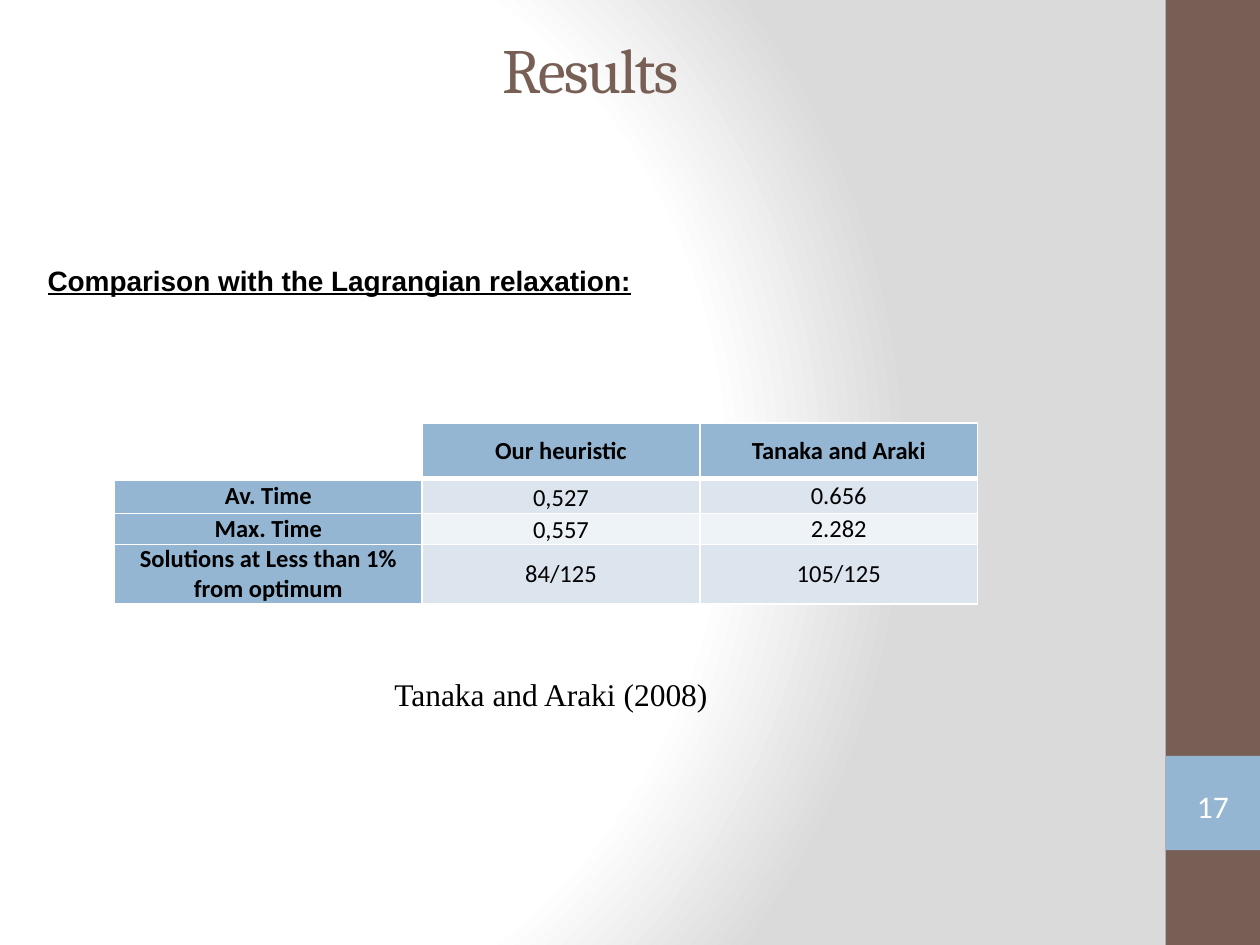
from dataclasses import dataclass

from lxml.etree import SubElement
from pptx import Presentation
from pptx.dml.color import RGBColor
from pptx.enum.shapes import MSO_SHAPE
from pptx.enum.text import MSO_ANCHOR, PP_ALIGN
from pptx.oxml import parse_xml
from pptx.oxml.ns import nsdecls, qn
from pptx.util import Cm, Pt


@dataclass(frozen=True)
class Theme:
    brown: str = "775F55"
    blue: str = "94B6D2"
    white: str = "FFFFFF"
    black: str = "000000"
    grey: str = "DADADA"
    bands: tuple = ("DCE5EE", "EEF3F7")
    title_size: int = 36
    body_size: int = 18
    heading_size: int = 16
    table_size: int = 14
    thin_line: int = 1
    thick_line: int = 3


THEME = Theme()

ROWS = [
    ["", "Our heuristic", "Tanaka and Araki"],
    ["Av. Time", "0,527", "0.656"],
    ["Max. Time", "0,557", "2.282"],
    ["Solutions at Less than 1% from optimum", "84/125", "105/125"],
]
COLUMN_WIDTHS = [6.2, 5.6, 5.6]
ROW_HEIGHTS = [1.12, 0.7, 0.62, 1.2]


def set_background(page):
    """Radial gradient, white in the middle and grey at the rim."""
    page.background.fill.solid()
    properties = page.background._cSld.bg.bgPr
    stops = [(0, THEME.white), (75, THEME.white), (100, THEME.grey)]
    stop_xml = "".join(
        f'<a:gs pos="{percent * 1000}"><a:srgbClr val="{color}"/></a:gs>'
        for percent, color in stops
    )
    gradient = parse_xml(
        f'<a:gradFill {nsdecls("a")} rotWithShape="1"><a:gsLst>{stop_xml}</a:gsLst>'
        '<a:path path="circle"><a:fillToRect l="20000" t="50000" r="100000" b="50000"/>'
        "</a:path></a:gradFill>"
    )
    properties.replace(properties.find(qn("a:solidFill")), gradient)


def add_block(page, left, top, width, height, color):
    block = page.shapes.add_shape(
        MSO_SHAPE.RECTANGLE, Cm(left), Cm(top), Cm(width), Cm(height)
    )
    block.shadow.inherit = False
    block.fill.solid()
    block.fill.fore_color.rgb = RGBColor.from_string(color)
    block.line.fill.background()


def write(frame, text, font, size, color=THEME.black, bold=False, align=PP_ALIGN.CENTER):
    """Fill a text frame with one formatted paragraph and return its run."""
    frame.text = text
    para = frame.paragraphs[0]
    para.alignment = align
    span = para.runs[0]
    span.font.name = font
    span.font.size = Pt(size)
    span.font.bold = bold
    span.font.color.rgb = RGBColor.from_string(color)
    return span


def add_text(page, left, top, width, height, text, font, size,
             anchor=MSO_ANCHOR.TOP, **style):
    box = page.shapes.add_textbox(Cm(left), Cm(top), Cm(width), Cm(height))
    frame = box.text_frame
    frame.word_wrap = True
    frame.vertical_anchor = anchor
    return write(frame, text, font, size, **style)


def set_borders(cell, **widths):
    properties = cell._tc.get_or_add_tcPr()
    for side in "LRTB":
        width = widths.get(side, THEME.thin_line)
        line = SubElement(properties, qn(f"a:ln{side}"), w=str(Pt(width)))
        fill = SubElement(line, qn("a:solidFill"))
        SubElement(fill, qn("a:srgbClr"), val=THEME.white)


def format_cell(cell, row, column, text):
    if row == 0:
        set_borders(cell, B=THEME.thick_line)
    elif row == 1:
        set_borders(cell, T=THEME.thick_line)
    else:
        set_borders(cell)
    if not text:
        cell.fill.background()
        return
    is_header = row == 0 or column == 0
    color = THEME.blue if is_header else THEME.bands[(row - 1) % 2]
    cell.fill.solid()
    cell.fill.fore_color.rgb = RGBColor.from_string(color)
    is_low = column == 1 and row in (1, 2)
    cell.vertical_anchor = MSO_ANCHOR.BOTTOM if is_low else MSO_ANCHOR.MIDDLE
    cell.margin_left = cell.margin_right = Cm(0.03 if is_low else 0.18)
    cell.margin_top = Cm(0.03 if is_low else 0)
    cell.margin_bottom = 0
    write(cell.text_frame, text, "Calibri", THEME.table_size, bold=is_header)


def add_results_table(page, left, top):
    table = page.shapes.add_table(
        len(ROWS), len(COLUMN_WIDTHS), Cm(left), Cm(top),
        Cm(sum(COLUMN_WIDTHS)), Cm(sum(ROW_HEIGHTS)),
    ).table
    table.first_row = table.horz_banding = False
    for column, width in zip(table.columns, COLUMN_WIDTHS):
        column.width = Cm(width)
    for row, height in zip(table.rows, ROW_HEIGHTS):
        row.height = Cm(height)
    for row, texts in enumerate(ROWS):
        for column, text in enumerate(texts):
            format_cell(table.cell(row, column), row, column, text)


def main():
    deck = Presentation()
    deck.slide_width, deck.slide_height = Cm(25.4), Cm(19.05)
    page = deck.slides.add_slide(deck.slide_layouts[6])
    set_background(page)

    add_block(page, 23.5, 0, 1.9, 19.05, THEME.brown)
    add_block(page, 23.5, 15.24, 1.9, 1.9, THEME.blue)

    title = add_text(page, 1.32, 0.33, 21.16, 2.08, "Results", "Cambria",
                     THEME.title_size, MSO_ANCHOR.MIDDLE, color=THEME.brown)
    title.font._element.set("spc", "-100")
    add_text(page, 23.5, 15.7, 1.9, 1.1, "17", "Calibri",
             THEME.body_size, MSO_ANCHOR.MIDDLE, color=THEME.white)

    add_results_table(page, 2.31, 8.53)
    add_text(page, 7.7, 13.49, 6.91, 1.02, "Tanaka and Araki (2008)",
             "Times New Roman", THEME.body_size, align=PP_ALIGN.LEFT)
    heading = add_text(page, 0.71, 5.18, 12.9, 0.94,
                       "Comparison with the Lagrangian relaxation:", "Arial",
                       THEME.heading_size, bold=True, align=PP_ALIGN.LEFT)
    heading.font.underline = True

    deck.save("out.pptx")


if __name__ == "__main__":
    main()
